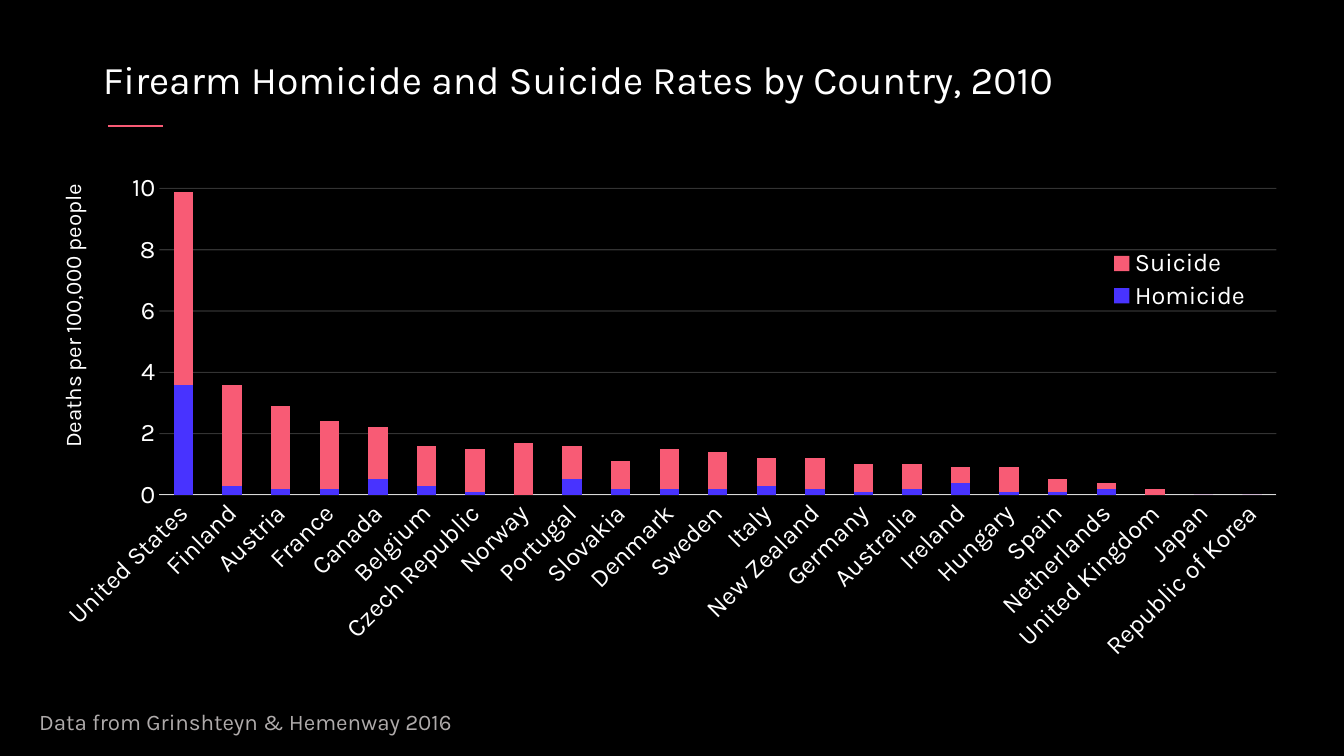
from lxml import etree
from pptx import Presentation
from pptx.chart.data import CategoryChartData as ChartData
from pptx.dml.color import RGBColor as RGB
from pptx.enum.chart import XL_CHART_TYPE as CHART, XL_LEGEND_POSITION as SIDE, XL_TICK_MARK as TICK
from pptx.enum.shapes import MSO_CONNECTOR as LINE
from pptx.enum.text import MSO_ANCHOR as ANCHOR, PP_ALIGN as ALIGN
from pptx.oxml.ns import qn
from pptx.util import Inches, Pt

COLORS = {
    "back": "000000",
    "text": "FFFFFF",
    "note": "AFABAB",
    "axis": "D9D9D9",
    "blue": "4833FF",
    "pink": "F85B75",
}
FACE = "Karla"
WIDE, HIGH = 12.33, 5.17
RATES = [
    ("United States", 3.6, 6.3),
    ("Finland", 0.3, 3.3),
    ("Austria", 0.2, 2.7),
    ("France", 0.2, 2.2),
    ("Canada", 0.5, 1.7),
    ("Belgium", 0.3, 1.3),
    ("Czech Republic", 0.1, 1.4),
    ("Norway", 0, 1.7),
    ("Portugal", 0.5, 1.1),
    ("Slovakia", 0.2, 0.9),
    ("Denmark", 0.2, 1.3),
    ("Sweden", 0.2, 1.2),
    ("Italy", 0.3, 0.9),
    ("New Zealand", 0.2, 1),
    ("Germany", 0.1, 0.9),
    ("Australia", 0.2, 0.8),
    ("Ireland", 0.4, 0.5),
    ("Hungary", 0.1, 0.8),
    ("Spain", 0.1, 0.4),
    ("Netherlands", 0.2, 0.2),
    ("United Kingdom", 0, 0.2),
    ("Japan", 0, 0),
    ("Republic of Korea", 0, 0),
]


def color(name):
    return RGB.from_string(COLORS[name])


def style(font, size, tint="text"):
    font.name = FACE
    font.size = Pt(size)
    font.bold = False
    font.color.rgb = color(tint)


def write(frame, text, size, tint="text"):
    frame.word_wrap = True
    para = frame.paragraphs[0]
    para.alignment = ALIGN.LEFT
    para.line_spacing = 0.9
    run = para.add_run()
    run.text = text
    style(run.font, size, tint)


def head(slide, text):
    title = slide.shapes.title
    title.left, title.top = Inches(0.92), Inches(0.37)
    title.width, title.height = Inches(11.5), Inches(0.88)
    title.text_frame.vertical_anchor = ANCHOR.MIDDLE
    write(title.text_frame, text, 28)


def rule(slide):
    line = slide.shapes.add_connector(
        LINE.STRAIGHT, Inches(1.07), Inches(1.25), Inches(1.62), Inches(1.25))
    line.line.color.rgb = color("pink")
    line.line.width = Pt(1.25)
    etree.SubElement(line._element.spPr, qn("a:effectLst"))


def place(part, index, inner=False, **spots):
    for old in part.findall(qn("c:layout")):
        part.remove(old)
    layout = etree.Element(qn("c:layout"))
    part.insert(index, layout)
    manual = etree.SubElement(layout, qn("c:manualLayout"))
    if inner:
        etree.SubElement(manual, qn("c:layoutTarget")).set("val", "inner")
    for key in ("x", "y"):
        etree.SubElement(manual, qn(f"c:{key}Mode")).set("val", "edge")
    for key, spot in spots.items():
        share = spot / (WIDE if key in "xw" else HIGH)
        etree.SubElement(manual, qn(f"c:{key}")).set("val", str(share))


def turn(body, angle):
    body.set("rot", str(angle * 60000))
    body.set("vert", "horz")


def set_base(axis):
    axis.major_tick_mark = axis.minor_tick_mark = TICK.NONE
    axis.has_major_gridlines = False
    style(axis.tick_labels.font, 18)
    axis.format.line.color.rgb = color("axis")
    axis.format.line.width = Pt(0.75)
    turn(axis._element.find(qn("c:txPr")).find(qn("a:bodyPr")), -45)


def set_scale(axis):
    axis.major_tick_mark = axis.minor_tick_mark = TICK.NONE
    axis.maximum_scale, axis.major_unit = 10, 2
    style(axis.tick_labels.font, 18)
    axis.format.line.fill.background()
    axis.has_major_gridlines = True
    grid = axis.major_gridlines.format.line
    grid.color.rgb = color("text")
    grid.width = Pt(0.75)
    tint = axis._element.find(qn("c:majorGridlines")).find(".//" + qn("a:srgbClr"))
    etree.SubElement(tint, qn("a:alpha")).set("val", "20000")
    frame = axis.axis_title.text_frame
    run = frame.paragraphs[0].add_run()
    run.text = "Deaths per 100,000 people"
    style(run.font, 16)
    turn(frame._txBody.find(qn("a:bodyPr")), -90)
    place(axis.axis_title._element, 1, x=0.04, y=0.12)


def set_key(chart):
    chart.has_legend = True
    key = chart.legend
    key.position = SIDE.RIGHT
    key.include_in_layout = False
    style(key.font, 18)
    place(key._element, 1, x=10.4, y=0.77, w=1.6, h=0.67)


def plot(slide):
    names, deaths, losses = zip(*RATES)
    data = ChartData()
    data.categories = names
    data.add_series("Homicide", deaths)
    data.add_series("Suicide", losses)
    chart = slide.shapes.add_chart(
        CHART.COLUMN_STACKED, Inches(0.5), Inches(1.67), Inches(WIDE), Inches(HIGH), data).chart
    chart.has_title = False
    style(chart.font, 18)
    bars = chart.plots[0]
    bars.gap_width, bars.overlap = 150, 100
    bars.vary_by_categories = False
    for bar, tint in zip(bars.series, ("blue", "pink")):
        bar.format.fill.solid()
        bar.format.fill.fore_color.rgb = color(tint)
    set_base(chart.category_axis)
    set_scale(chart.value_axis)
    set_key(chart)
    area = chart._chartSpace.chart.plotArea
    place(area, 0, inner=True, x=1.08, y=0.2, w=11.08, h=3.04)


def note(slide, text):
    box = slide.shapes.add_textbox(Inches(0.29), Inches(7.01), Inches(8.42), Inches(0.42))
    write(box.text_frame, text, 16, "note")


def main():
    deck = Presentation()
    deck.slide_width, deck.slide_height = Inches(13.33), Inches(7.5)
    slide = deck.slides.add_slide(deck.slide_layouts[5])
    slide.background.fill.solid()
    slide.background.fill.fore_color.rgb = color("back")
    rule(slide)
    head(slide, "Firearm Homicide and Suicide Rates by Country, 2010")
    plot(slide)
    note(slide, "Data from Grinshteyn & Hemenway 2016")
    deck.save("out.pptx")


if __name__ == "__main__":
    main()
